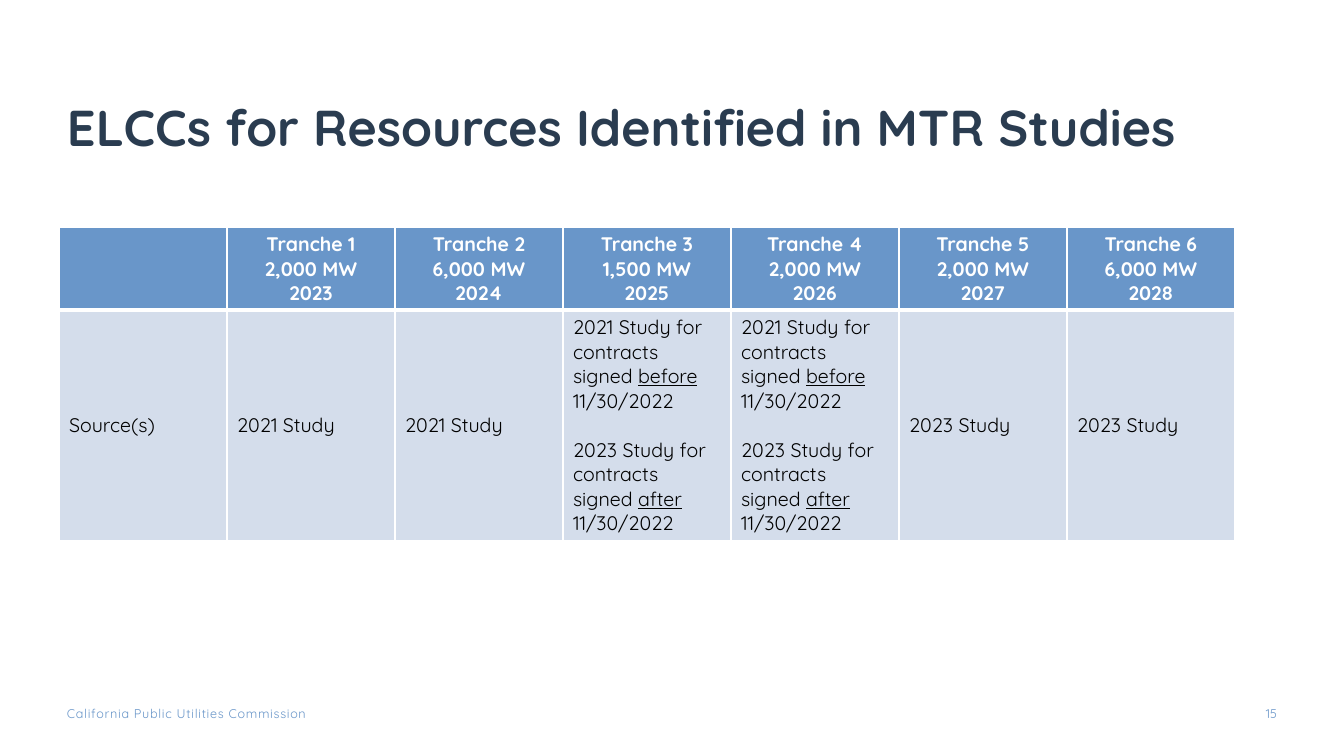
from dataclasses import dataclass
from pptx import Presentation
from pptx.dml.color import RGBColor as RGB
from pptx.enum.text import MSO_ANCHOR as ANCHOR, MSO_AUTO_SIZE as AUTO, PP_ALIGN as ALIGN
from pptx.oxml import parse_xml
from pptx.oxml.ns import nsdecls
from pptx.util import Emu, Pt

TITLE = "ELCCs for Resources Identified in MTR Studies"
AGENCY = "California Public Utilities Commission"
PAGE = "15"
TRANCHES = [
    ("Tranche 1", "2,000 MW", "2023"),
    ("Tranche 2", "6,000 MW", "2024"),
    ("Tranche 3", "1,500 MW", "2025"),
    ("Tranche 4", "2,000 MW", "2026"),
    ("Tranche 5", "2,000 MW", "2027"),
    ("Tranche 6", "6,000 MW", "2028"),
]
STUDY_2021 = [["2021 Study"]]
STUDY_2023 = [["2023 Study"]]
SPLIT = [
    ["2021 Study for contracts signed ", "before", " 11/30/2022"],
    ["2023 Study for contracts signed ", "after", " 11/30/2022"],
]
UNDERLINED = {"before", "after"}
SOURCES = [[["Source(s)"]], STUDY_2021, STUDY_2021, SPLIT, SPLIT, STUDY_2023, STUDY_2023]
HEADERS = [[]] + [[[line] for line in tranche] for tranche in TRANCHES]


@dataclass(frozen=True)
class Theme:
    font: str = "Quicksand"
    navy: str = "2A3C50"
    blue: str = "6996C9"
    pale: str = "D4DDEB"
    white: str = "FFFFFF"
    black: str = "000000"
    title: int = 36
    body: int = 14
    small: int = 9
    paragraph_gap: float = 17.5
    thin: int = 1
    thick: int = 3


THEME = Theme()
SLIDE = (1344, 756)
TITLE_BOX = (67, 16, 1210, 146)
AGENCY_BOX = (67, 706, 324, 15)
PAGE_BOX = (1235, 706, 42, 20)
TABLE_AT = (59, 227)
COLUMN = 168
ROWS = (83, 231)


def px(length):
    return Emu(round(length * 914400 / 100.8))


def style(font, size, color, bold=False):
    font.name = THEME.font
    font.size = Pt(size)
    font.bold = bold
    font.color.rgb = RGB.from_string(color)


def set_margins(frame, left, top, right, bottom):
    frame.margin_left, frame.margin_top = px(left), px(top)
    frame.margin_right, frame.margin_bottom = px(right), px(bottom)


def add_title(slide):
    title = slide.shapes.title
    title.left, title.top, title.width, title.height = map(px, TITLE_BOX)
    frame = title.text_frame
    frame.text = TITLE
    frame.auto_size = AUTO.NONE
    frame.word_wrap = True
    frame.vertical_anchor = ANCHOR.BOTTOM
    set_margins(frame, 0, 5, 10, 5)
    heading = frame.paragraphs[0]
    heading.alignment = ALIGN.LEFT
    heading.line_spacing = 0.9
    style(heading.runs[0].font, THEME.title, THEME.navy, True)


def add_footer(slide, text, box, alignment, spacing=0):
    frame = slide.shapes.add_textbox(*map(px, box)).text_frame
    frame.text = text
    frame.word_wrap = True
    set_margins(frame, 0, 0, 0, 0)
    footer = frame.paragraphs[0]
    footer.alignment = alignment
    run = footer.runs[0]
    style(run.font, THEME.small, THEME.blue)
    if spacing:
        run._r.get_or_add_rPr().set("spc", str(spacing))


def set_borders(cell, **widths):
    properties = cell._tc.get_or_add_tcPr()
    for side in "LRTB":
        width = Pt(widths.get(side, THEME.thin))
        properties.append(parse_xml(
            f'<a:ln{side} {nsdecls("a")} w="{width}"><a:solidFill>'
            f'<a:srgbClr val="{THEME.white}"/></a:solidFill></a:ln{side}>'))


def fill_cell(cell, paragraphs, fill, color, bold, alignment, gap):
    cell.fill.solid()
    cell.fill.fore_color.rgb = RGB.from_string(fill)
    frame = cell.text_frame
    for index, parts in enumerate(paragraphs):
        paragraph = frame.add_paragraph() if index else frame.paragraphs[0]
        paragraph.alignment = alignment
        if index:
            paragraph.space_before = Pt(gap)
        for part in parts:
            run = paragraph.add_run()
            run.text = part
            style(run.font, THEME.body, color, bold)
            if part in UNDERLINED:
                run.font.underline = True


def add_studies(slide):
    size = (COLUMN * len(SOURCES), sum(ROWS))
    studies = slide.shapes.add_table(
        len(ROWS), len(SOURCES), *map(px, TABLE_AT + size)).table
    for row, height in zip(studies.rows, ROWS):
        row.height = px(height)
    for column in studies.columns:
        column.width = px(COLUMN)
    for index, (header, source) in enumerate(zip(HEADERS, SOURCES)):
        top, bottom = studies.cell(0, index), studies.cell(1, index)
        set_borders(top, B=THEME.thick)
        set_borders(bottom, T=THEME.thick)
        fill_cell(top, header, THEME.blue, THEME.white, True, ALIGN.CENTER, 0)
        fill_cell(bottom, source, THEME.pale, THEME.black, False, ALIGN.LEFT,
                  THEME.paragraph_gap)
        bottom.vertical_anchor = ANCHOR.MIDDLE


def main():
    deck = Presentation()
    deck.slide_width, deck.slide_height = map(px, SLIDE)
    slide = deck.slides.add_slide(deck.slide_layouts[5])
    add_footer(slide, AGENCY, AGENCY_BOX, ALIGN.LEFT, spacing=50)
    add_title(slide)
    add_studies(slide)
    add_footer(slide, PAGE, PAGE_BOX, ALIGN.RIGHT)
    deck.save("out.pptx")


if __name__ == "__main__":
    main()
